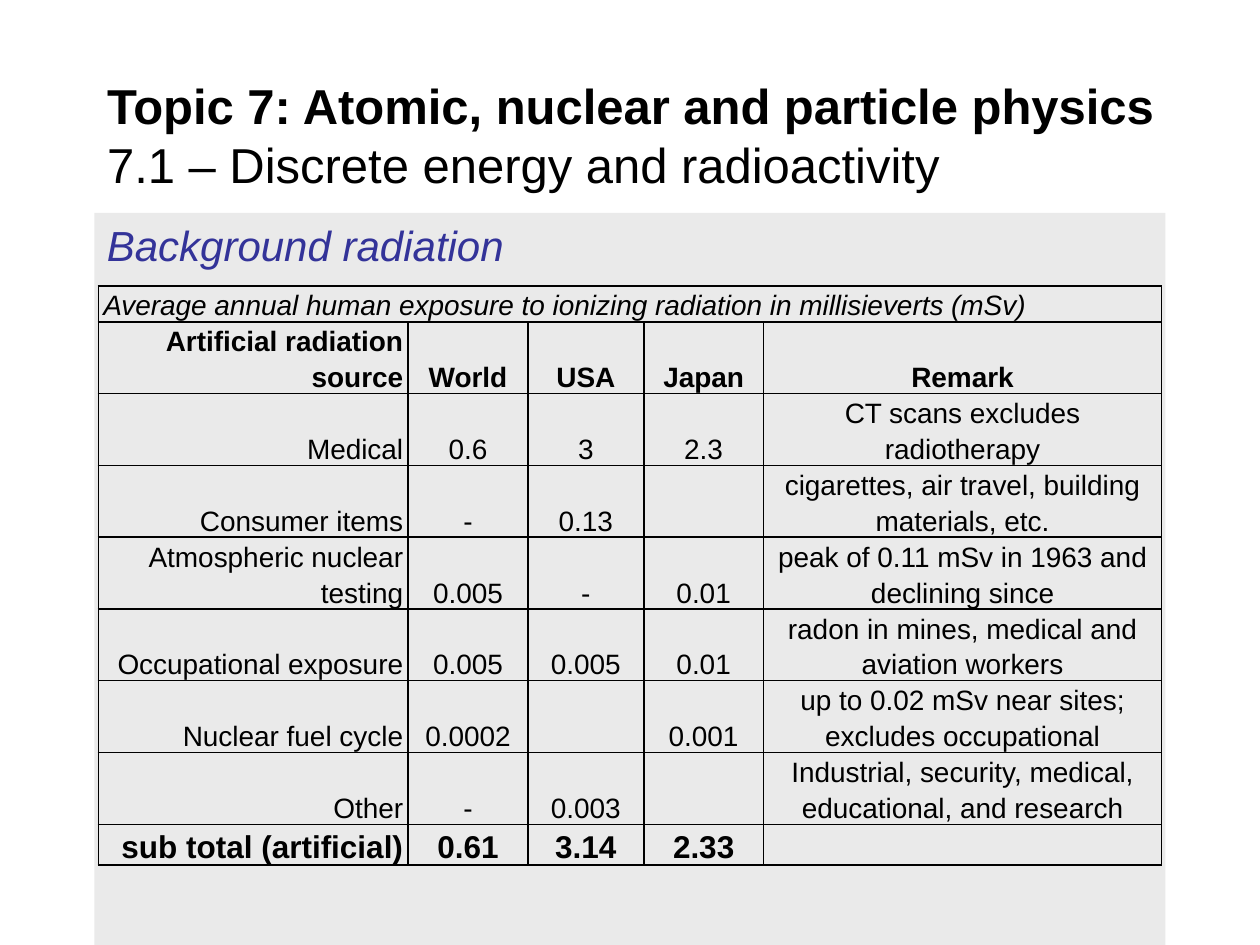
import dataclasses
import typing

import lxml.etree
import pptx
import pptx.dml.color
import pptx.enum.shapes
import pptx.enum.text
import pptx.oxml.ns
import pptx.util

Inches = pptx.util.Inches
Pt = pptx.util.Pt
Align = pptx.enum.text.PP_ALIGN
Anchor = pptx.enum.text.MSO_ANCHOR


@dataclasses.dataclass(frozen=True)
class Theme:
    font: str = "Arial"
    text: str = "000000"
    heading: str = "333399"
    panel: str = "EAEAEA"
    title_size: float = 28
    heading_size: float = 24
    table_size: float = 16
    total_size: float = 18
    border_width: float = 1


@dataclasses.dataclass(frozen=True)
class TableRow:
    cells: tuple[str, ...]
    height: float = 0.57
    size: float = 16
    bold: bool = False


THEME = Theme()

CAPTION = "Average annual human exposure to ionizing radiation in millisieverts (mSv)"
CAPTION_HEIGHT = 0.28
COLUMN_WIDTHS = (2.46, 0.95, 0.92, 0.95, 3.16)
ROWS = (
    TableRow(("Artificial radiation source", "World", "USA", "Japan", "Remark"), bold=True),
    TableRow(("Medical", "0.6", "3", "2.3", "CT scans excludes radiotherapy")),
    TableRow(("Consumer items", "-", "0.13", "", "cigarettes, air travel, building materials, etc.")),
    TableRow(("Atmospheric nuclear testing", "0.005", "-", "0.01",
              "peak of 0.11 mSv in 1963 and declining since")),
    TableRow(("Occupational exposure", "0.005", "0.005", "0.01",
              "radon in mines, medical and aviation workers")),
    TableRow(("Nuclear fuel cycle", "0.0002", "", "0.001",
              "up to 0.02 mSv near sites; excludes occupational")),
    TableRow(("Other", "-", "0.003", "", "Industrial, security, medical, educational, and research")),
    TableRow(("sub total (artificial)", "0.61", "3.14", "2.33", ""),
             height=0.32, size=THEME.total_size, bold=True),
)


def add_run(paragraph: typing.Any, text: str, size: float, color: str = THEME.text,
            bold: bool = False, italic: bool = False) -> None:
    run = paragraph.add_run()
    run.text = text
    run.font.name = THEME.font
    run.font.size = Pt(size)
    run.font.bold = bold
    run.font.italic = italic
    run.font.color.rgb = pptx.dml.color.RGBColor.from_string(color)


def set_borders(cell: typing.Any) -> None:
    """Draw a solid line on all four sides; lines must precede the fill."""
    properties = cell._tc.get_or_add_tcPr()
    for index, side in enumerate(("a:lnL", "a:lnR", "a:lnT", "a:lnB")):
        line = lxml.etree.Element(pptx.oxml.ns.qn(side), w=str(Pt(THEME.border_width)))
        fill = lxml.etree.SubElement(line, pptx.oxml.ns.qn("a:solidFill"))
        lxml.etree.SubElement(fill, pptx.oxml.ns.qn("a:srgbClr"), val=THEME.text)
        properties.insert(index, line)


def format_cell(cell: typing.Any) -> None:
    cell.margin_left = cell.margin_right = Inches(0.04)
    cell.margin_top = cell.margin_bottom = 0
    cell.fill.background()
    set_borders(cell)


def write_cell(cell: typing.Any, text: str, size: float, alignment: typing.Any,
               bold: bool = False, italic: bool = False) -> None:
    paragraph = cell.text_frame.paragraphs[0]
    paragraph.alignment = alignment
    paragraph.line_spacing = 1.15
    if text:
        add_run(paragraph, text, size, bold=bold, italic=italic)


def add_title(slide: typing.Any) -> None:
    title = slide.shapes.title
    title.left, title.top = Inches(0.75), Inches(0.58)
    title.width, title.height = Inches(8.74), Inches(0.98)
    frame = title.text_frame
    frame.auto_size = pptx.enum.text.MSO_AUTO_SIZE.NONE
    frame.vertical_anchor = Anchor.MIDDLE
    paragraph = frame.paragraphs[0]
    paragraph.alignment = Align.LEFT
    add_run(paragraph, "Topic 7: Atomic, nuclear and particle physics", THEME.title_size, bold=True)
    paragraph.add_line_break()
    add_run(paragraph, "7.1 – Discrete energy and radioactivity", THEME.title_size)


def add_panel(slide: typing.Any) -> None:
    panel = slide.shapes.add_shape(pptx.enum.shapes.MSO_SHAPE.RECTANGLE,
                                   Inches(0.75), Inches(1.69), Inches(8.5), Inches(5.81))
    panel.shadow.inherit = False
    panel.fill.solid()
    panel.fill.fore_color.rgb = pptx.dml.color.RGBColor.from_string(THEME.panel)
    panel.line.fill.background()
    panel.text_frame.word_wrap = True
    panel.text_frame.vertical_anchor = Anchor.TOP
    paragraph = panel.text_frame.paragraphs[0]
    paragraph.alignment = Align.LEFT
    paragraph.space_before = Pt(0.2 * THEME.heading_size)
    add_run(paragraph, "Background radiation", THEME.heading_size, THEME.heading, italic=True)


def add_exposure_table(slide: typing.Any) -> None:
    heights = [CAPTION_HEIGHT] + [row.height for row in ROWS]
    table = slide.shapes.add_table(len(heights), len(COLUMN_WIDTHS), Inches(0.78), Inches(2.27),
                                   Inches(sum(COLUMN_WIDTHS)), Inches(sum(heights))).table
    table.first_row = False
    table.horz_banding = False
    for column, width in zip(table.columns, COLUMN_WIDTHS):
        column.width = Inches(width)
    for table_row, height in zip(table.rows, heights):
        table_row.height = Inches(height)
    for cell in table.iter_cells():
        format_cell(cell)

    # Caption across all columns
    caption = table.cell(0, 0)
    caption.merge(table.cell(0, len(COLUMN_WIDTHS) - 1))
    write_cell(caption, CAPTION, THEME.table_size, Align.LEFT, italic=True)

    # Header, sources and subtotal
    for row_index, row in enumerate(ROWS, start=1):
        for column_index, text in enumerate(row.cells):
            cell = table.cell(row_index, column_index)
            cell.vertical_anchor = Anchor.BOTTOM
            alignment = Align.CENTER if column_index else Align.RIGHT
            write_cell(cell, text, row.size, alignment, bold=row.bold)


def main() -> None:
    presentation = pptx.Presentation()
    presentation.slide_width = Inches(10)
    presentation.slide_height = Inches(7.5)
    slide = presentation.slides.add_slide(presentation.slide_layouts[5])
    add_panel(slide)
    add_title(slide)
    add_exposure_table(slide)
    presentation.save("out.pptx")


if __name__ == "__main__":
    main()
